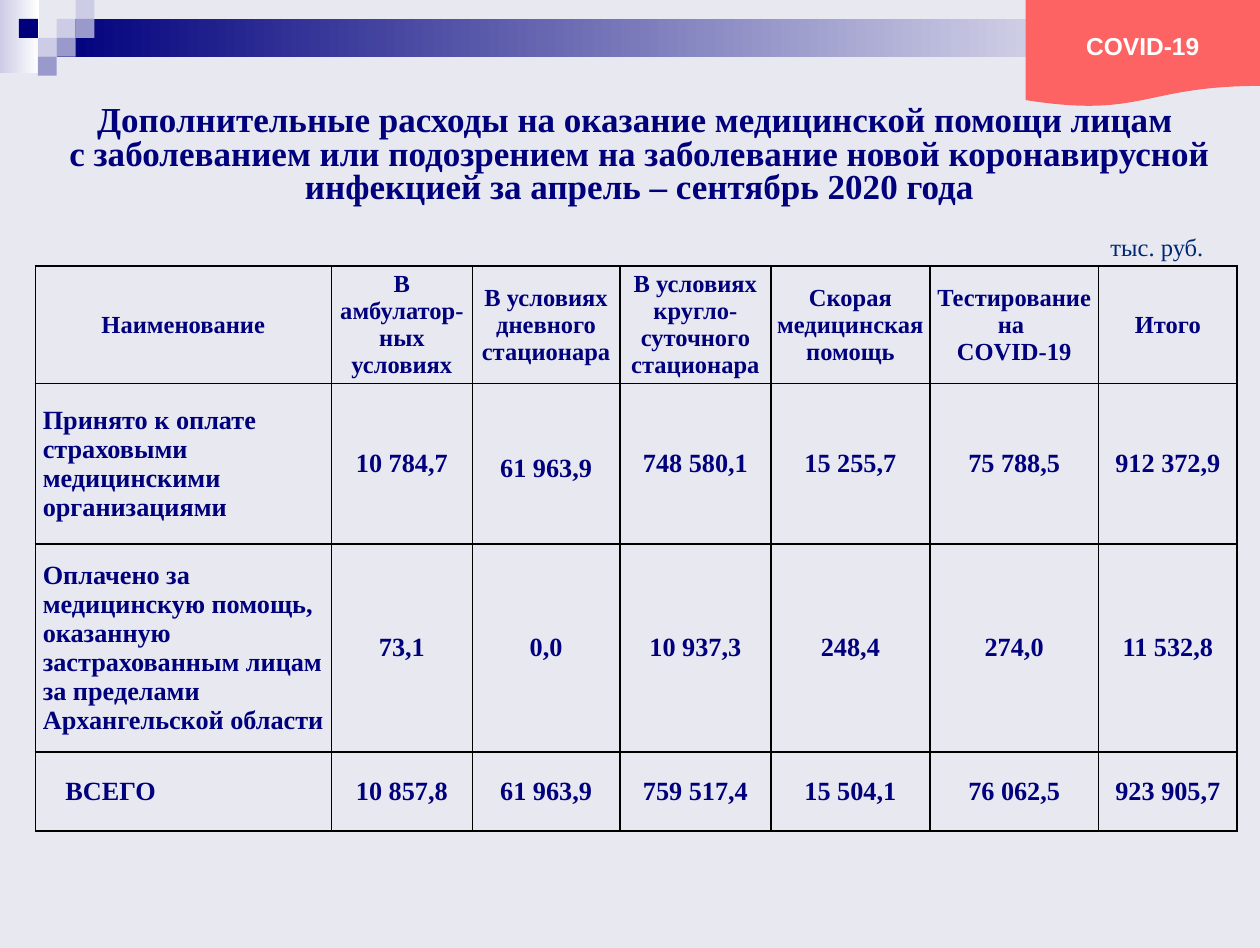
import pptx
import pptx.util
import pptx.dml.color
import pptx.enum.shapes
import pptx.enum.text
import pptx.oxml
import pptx.oxml.ns

Inches, Pt = pptx.util.Inches, pptx.util.Pt
SHAPE = pptx.enum.shapes.MSO_SHAPE
ALIGN = pptx.enum.text.PP_ALIGN
MIDDLE = pptx.enum.text.MSO_ANCHOR.MIDDLE
NAVY, LILAC, VIOLET, WHITE = "00007D", "CCCCE6", "9999CC", "FFFFFF"
SERIF = "Times New Roman"

TITLE = ("Дополнительные расходы на оказание медицинской помощи лицам \v"
         "с заболеванием или подозрением на заболевание новой коронавирусной "
         "инфекцией за апрель – сентябрь 2020 года")
UNIT = "тыс. руб."
BADGE = "COVID-19"
ROWS = [
    ["Наименование", "В амбулатор-ных условиях", "В условиях дневного стационара",
     "В условиях кругло-суточного стационара", "Скорая медицинская помощь",
     "Тестирование на \vCOVID-19", "Итого"],
    ["Принято к оплате страховыми медицинскими организациями",
     "10 784,7", "61 963,9", "748 580,1", "15 255,7", "75 788,5", "912 372,9"],
    ["Оплачено за медицинскую помощь, оказанную застрахованным лицам за пределами "
     "Архангельской области",
     "73,1", "0,0", "10 937,3", "248,4", "274,0", "11 532,8"],
    ["ВСЕГО", "10 857,8", "61 963,9", "759 517,4", "15 504,1", "76 062,5", "923 905,7"],
]
COL_WIDTHS = [2.35, 1.12, 1.17, 1.2, 1.26, 1.34, 1.1]
ROW_HEIGHTS = [0.86, 1.27, 1.65, 0.63]
GRADIENT_BARS = [((0, 0, 0.31, 0.58), LILAC), ((0.45, 0.15, 9.55, 0.3), NAVY)]
TILE = 0.15
TILES = [(3, 1, LILAC), (4, 0, LILAC), (4, 1, VIOLET), (2, 2, LILAC),
         (1, 1, NAVY), (3, 2, VIOLET), (2, 3, VIOLET)]


def rgb(value):
    return pptx.dml.color.RGBColor.from_string(value)


def add_shape(slide, kind, box, color, fade_to=None):
    sp = slide.shapes.add_shape(kind, *map(Inches, box))
    sp.shadow.inherit = False
    sp.line.fill.background()
    if fade_to:
        sp.fill.gradient()
        sp.fill.gradient_angle = 0
        for stop, position, c in zip(sp.fill.gradient_stops, (0, 1), (color, fade_to)):
            stop.position = position
            stop.color.rgb = rgb(c)
    else:
        sp.fill.solid()
        sp.fill.fore_color.rgb = rgb(color)
    return sp


def write(tf, text, size, color, align, bold=True, font=SERIF):
    tf.word_wrap = True
    p = tf.paragraphs[0]
    p.text = text
    p.alignment = align
    p.font.size, p.font.bold, p.font.name = Pt(size), bold, font
    p.font.color.rgb = rgb(color)
    return p


def add_text(slide, box, *args, **kwargs):
    sp = slide.shapes.add_textbox(*map(Inches, box))
    return sp.text_frame, write(sp.text_frame, *args, **kwargs)


def set_borders(cell):
    tc_pr = cell._tc.get_or_add_tcPr()
    for side in "LRTB":
        tc_pr.append(pptx.oxml.parse_xml(
            f'<a:ln{side} {pptx.oxml.ns.nsdecls("a")} w="{Pt(1)}"><a:solidFill>'
            f'<a:srgbClr val="000000"/></a:solidFill></a:ln{side}>'))


def add_cost_table(slide):
    frame = slide.shapes.add_table(
        len(ROWS), len(COL_WIDTHS), Inches(0.28), Inches(2.11),
        Inches(sum(COL_WIDTHS)), Inches(sum(ROW_HEIGHTS)))
    table = frame.table
    table.first_row = table.horz_banding = False
    for column, width in zip(table.columns, COL_WIDTHS):
        column.width = Inches(width)
    for row, height in zip(table.rows, ROW_HEIGHTS):
        row.height = Inches(height)
    for i, row in enumerate(ROWS):
        for j, text in enumerate(row):
            cell = table.cell(i, j)
            set_borders(cell)
            cell.fill.background()
            cell.vertical_anchor = MIDDLE
            cell.margin_left = cell.margin_right = Inches(0 if i == 0 and j else 0.06)
            cell.margin_top = cell.margin_bottom = 0
            align = ALIGN.LEFT if i and j == 0 else ALIGN.CENTER
            write(cell.text_frame, text, 15 if i else 14, NAVY, align)
    table.cell(1, 2).margin_top = Inches(0.08)
    total = table.cell(len(ROWS) - 1, 0)
    total.margin_left = Inches(0.24)


def main():
    """Build the slide on additional medical costs."""
    prs = pptx.Presentation()
    prs.slide_width, prs.slide_height = Inches(10), Inches(7.52)
    s = prs.slides.add_slide(prs.slide_layouts[6])
    s.background.fill.solid()
    s.background.fill.fore_color.rgb = rgb("E8E8F1")

    for box, color in GRADIENT_BARS:
        add_shape(s, SHAPE.RECTANGLE, box, color, WHITE)
    for col, row, color in TILES:
        add_shape(s, SHAPE.RECTANGLE, (col * TILE, row * TILE, TILE, TILE), color)

    tf, p = add_text(s, (0.35, 0.61, 9.45, 1.26), TITLE, 20, NAVY, ALIGN.CENTER)
    tf.vertical_anchor = MIDDLE
    p.line_spacing = 0.8

    add_cost_table(s)

    badge = add_shape(s, SHAPE.FLOWCHART_DOCUMENT, (8.14, 0, 1.86, 0.85), "FD6363")
    badge.text_frame.vertical_anchor = MIDDLE
    badge.text_frame.margin_top = Inches(0.1)
    write(badge.text_frame, BADGE, 14, WHITE, ALIGN.CENTER, font="Arial")

    add_text(s, (8.31, 1.79, 1.34, 0.34), UNIT, 14, "002774", ALIGN.RIGHT, bold=False)
    prs.save("out.pptx")


if __name__ == "__main__":
    main()
